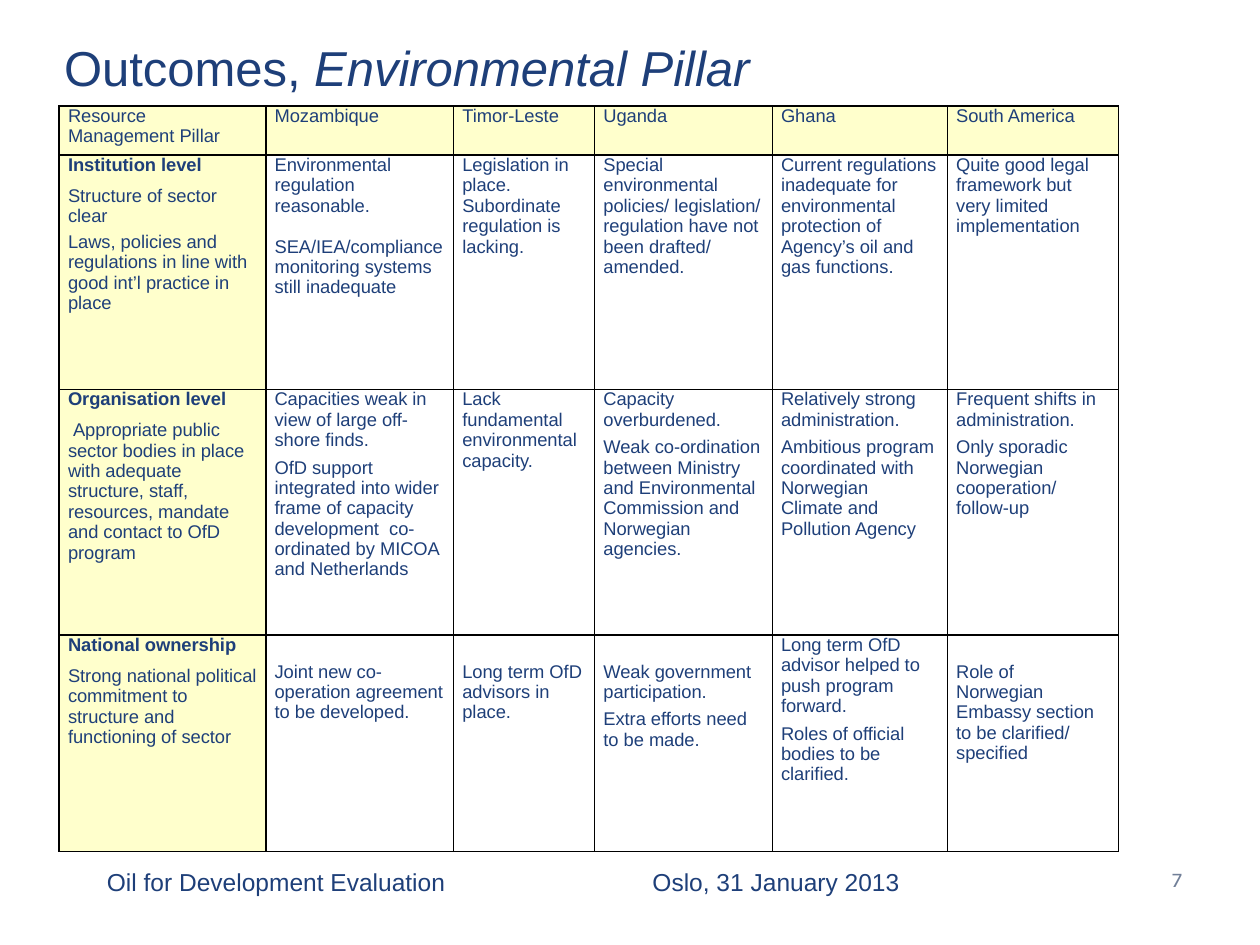
from dataclasses import dataclass

from lxml import etree
from pptx import Presentation
from pptx.dml.color import RGBColor
from pptx.enum.text import MSO_ANCHOR, PP_ALIGN
from pptx.oxml.ns import qn
from pptx.util import Inches, Pt

LEFT, RIGHT, JUSTIFY = PP_ALIGN.LEFT, PP_ALIGN.RIGHT, PP_ALIGN.JUSTIFY
TOP, MIDDLE = MSO_ANCHOR.TOP, MSO_ANCHOR.MIDDLE
NAVY, GREY, CREAM, BLACK = "1E3F79", "717F98", "FFFFCC", "000000"
CELL_SIZE = 10.5
BLANK_LAYOUT = 6


@dataclass(frozen=True)
class Para:
    """A cell paragraph; newlines in text are line breaks, gap is in points."""
    text: str
    gap: float = 4
    bold: bool = False
    indent: float = 0


@dataclass(frozen=True)
class Entry:
    paras: tuple[Para, ...]
    top: float = 0


@dataclass(frozen=True)
class Piece:
    text: str
    italic: bool = False


@dataclass(frozen=True)
class Label:
    pieces: tuple[Piece, ...]
    at: tuple[float, float, float, float]
    size: float
    font: str = "Arial"
    color: str = NAVY
    align: PP_ALIGN = LEFT
    anchor: MSO_ANCHOR = TOP


def entry(*texts: str, top: float = 0) -> Entry:
    return Entry(tuple(Para(text) for text in texts), top)


def level(heading: str, *criteria: Para) -> Entry:
    return Entry((Para(heading, bold=True), *criteria))


LOWERED = 0.21
COLUMN_WIDTHS = (1.64, 1.49, 1.12, 1.41, 1.39, 1.36)
ROW_HEIGHTS = (0.39, 1.86, 1.95, 1.72)

COUNTRIES = ("Mozambique", "Timor-Leste", "Uganda", "Ghana", "South America")
OUTCOMES = (
    (entry("Resource Management Pillar"), *(entry(country) for country in COUNTRIES)),
    (
        level("Institution level",
              Para("Structure of sector clear", 6),
              Para("Laws, policies and regulations in line with good int’l practice in place", 3)),
        Entry((Para("Environmental regulation reasonable."),
               Para("SEA/IEA/compliance monitoring systems still inadequate", 11.7))),
        entry("Legislation in place. Subordinate regulation is lacking."),
        entry("Special environmental policies/ legislation/ regulation have not been drafted/ amended."),
        entry("Current regulations inadequate for environmental protection of Agency’s oil and gas functions."),
        entry("Quite good legal framework but very limited implementation"),
    ),
    (
        level("Organisation level",
              Para("Appropriate public sector bodies in place with adequate structure, staff, "
                   "resources, mandate and contact to OfD program", 6, indent=0.04)),
        entry("Capacities weak in view of large off-shore finds.",
              "OfD support integrated into wider frame of capacity development  co-ordinated "
              "by MICOA and Netherlands"),
        entry("Lack fundamental environmental capacity."),
        entry("Capacity overburdened.",
              "Weak co-ordination between Ministry and Environmental Commission and Norwegian agencies."),
        entry("Relatively strong administration.",
              "Ambitious program coordinated with Norwegian \nClimate and Pollution Agency"),
        entry("Frequent shifts in administration.",
              "Only sporadic \nNorwegian \ncooperation/ follow-up"),
    ),
    (
        level("National ownership",
              Para("Strong national political commitment to structure and functioning of sector", 6)),
        entry("Joint new co-operation agreement to be developed.", top=LOWERED),
        entry("Long term OfD advisors in place.", top=LOWERED),
        entry("Weak government participation.", "Extra efforts need to be made.", top=LOWERED),
        entry("Long term OfD advisor helped to push program forward.",
              "Roles of official bodies to be clarified."),
        entry("Role of \nNorwegian \nEmbassy section to be clarified/ specified", top=LOWERED),
    ),
)

LABELS = (
    Label((Piece("Outcomes, "), Piece("Environmental Pillar", italic=True)),
          (0.41, 0.2, 6.78, 0.66), 28, anchor=MIDDLE),
    Label((Piece("Oil for Development Evaluation"),), (0.75, 6.83, 4.33, 0.5), 14),
    Label((Piece("Oslo, 31 January 2013"),), (5.08, 6.83, 2.64, 0.5), 14),
    Label((Piece("7"),), (7.4, 6.83, 2.08, 0.5), 12, "Karla", GREY, RIGHT),
)


def rgb(color: str) -> RGBColor:
    return RGBColor.from_string(color)


def add_run(paragraph, text: str, size: float, font: str, color: str,
            bold: bool = False, italic: bool = False) -> None:
    run = paragraph.add_run()
    run.text = text
    run.font.name, run.font.size = font, Pt(size)
    run.font.color.rgb = rgb(color)
    run.font.bold, run.font.italic = bold, italic


def add_label(slide, label: Label) -> None:
    frame = slide.shapes.add_textbox(*map(Inches, label.at)).text_frame
    frame.word_wrap = True
    frame.vertical_anchor = label.anchor
    paragraph = frame.paragraphs[0]
    paragraph.alignment = label.align
    for piece in label.pieces:
        add_run(paragraph, piece.text, label.size, label.font, label.color, italic=piece.italic)


def set_borders(cell, color: str, width: float) -> None:
    properties = cell._tc.get_or_add_tcPr()
    for side in ("lnL", "lnR", "lnT", "lnB"):
        line = etree.SubElement(properties, qn(f"a:{side}"), w=str(Pt(width)))
        fill = etree.SubElement(line, qn("a:solidFill"))
        etree.SubElement(fill, qn("a:srgbClr"), val=color)


def fill_cell(cell, content: Entry, shaded: bool, align: PP_ALIGN) -> None:
    set_borders(cell, BLACK, 1)
    if shaded:
        cell.fill.solid()
        cell.fill.fore_color.rgb = rgb(CREAM)
    else:
        cell.fill.background()
    cell.margin_left = cell.margin_right = Inches(0.07)
    cell.margin_top, cell.margin_bottom = Inches(content.top), 0
    frame = cell.text_frame
    for index, para in enumerate(content.paras):
        paragraph = frame.add_paragraph() if index else frame.paragraphs[0]
        paragraph.alignment = align
        if index:
            paragraph.space_before = Pt(para.gap)
        if para.indent:
            paragraph._p.get_or_add_pPr().set("indent", str(Inches(para.indent)))
        for number, line in enumerate(para.text.split("\n")):
            if number:
                paragraph.add_line_break()
            add_run(paragraph, line, CELL_SIZE, "Arial", NAVY, bold=para.bold)


def add_outcomes(slide) -> None:
    table = slide.shapes.add_table(
        len(ROW_HEIGHTS), len(COLUMN_WIDTHS), Inches(0.47), Inches(0.84),
        Inches(sum(COLUMN_WIDTHS)), Inches(sum(ROW_HEIGHTS))).table
    table.first_row = table.horz_banding = False
    for column, width in zip(table.columns, COLUMN_WIDTHS):
        column.width = Inches(width)
    for r, (height, entries) in enumerate(zip(ROW_HEIGHTS, OUTCOMES)):
        table.rows[r].height = Inches(height)
        for c, content in enumerate(entries):
            align = JUSTIFY if r == 0 and c > 0 else LEFT
            fill_cell(table.cell(r, c), content, r == 0 or c == 0, align)


def main() -> None:
    presentation = Presentation()
    presentation.slide_width, presentation.slide_height = Inches(10), Inches(7.5)
    slide = presentation.slides.add_slide(presentation.slide_layouts[BLANK_LAYOUT])
    for label in LABELS:
        add_label(slide, label)
    add_outcomes(slide)
    presentation.save("out.pptx")


if __name__ == "__main__":
    main()
